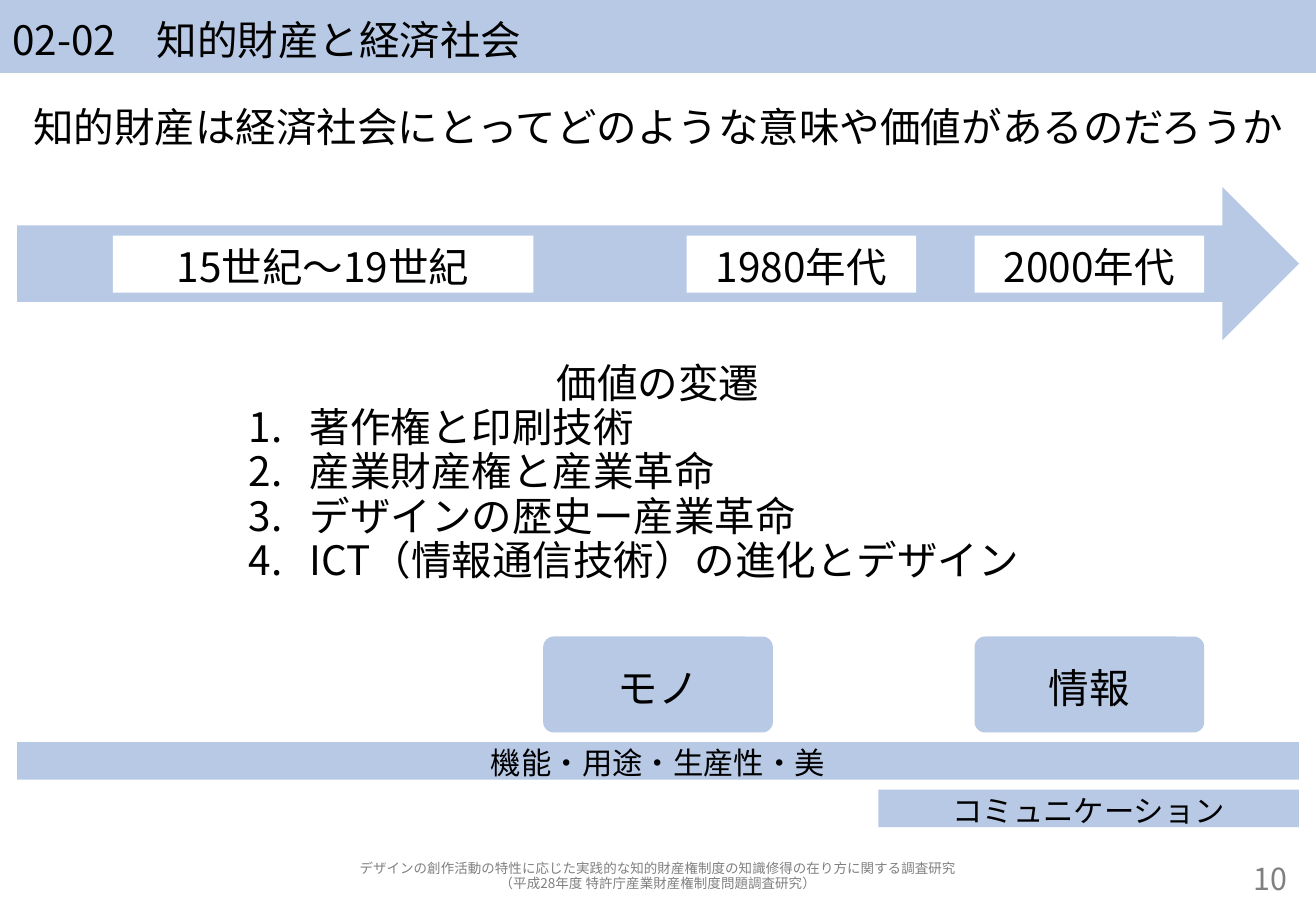
"""Build the slide on intellectual property and the economy."""
from pptx import Presentation
from pptx.dml.color import RGBColor
from pptx.enum.shapes import MSO_SHAPE as Shape
from pptx.enum.text import MSO_ANCHOR as Anchor, PP_ALIGN as Align
from pptx.oxml.xmlchemy import OxmlElement
from pptx.util import Inches, Pt

FONT = "Noto Sans CJK JP"
BLUE, WHITE, BLACK, GRAY = "B7C9E5", "FFFFFF", "000000", "808080"
SLIDE_WIDTH, SLIDE_HEIGHT = 10.83, 7.5
MARGIN = 0.14
CONTENT_WIDTH = SLIDE_WIDTH - 2 * MARGIN
TIGHT = 0.91

TITLE = "02-02\u3000知的財産と経済社会".replace("\u3000", "　")
QUESTION = "知的財産は経済社会にとってどのような意味や価値があるのだろうか"
PERIODS = [("15世紀～19世紀", 0.93, 3.46), ("1980年代", 5.65, 1.89), ("2000年代", 8.02, 1.89)]
HEADING = "価値の変遷"
CHANGES = ["著作権と印刷技術", "産業財産権と産業革命", "デザインの歴史ー産業革命",
           "ICT（情報通信技術）の進化とデザイン"]
SUBJECTS = [("モノ", 4.47), ("情報", 8.02)]
VALUES = [("機能・用途・生産性・美", 6.11, CONTENT_WIDTH), ("コミュニケーション", 6.5, 3.46)]
FOOTER = ["デザインの創作活動の特性に応じた実践的な知的財産権制度の知識修得の在り方に関する調査研究",
          "（平成28年度 特許庁産業財産権制度問題調査研究）"]
PAGE = "10"


def rgb(value):
    return RGBColor.from_string(value)


def write(shape, lines, size=24, color=BLACK, align=Align.CENTER, spacing=1.1, anchor=Anchor.MIDDLE):
    frame = shape.text_frame
    frame.word_wrap = True
    frame.vertical_anchor = anchor
    frame.margin_left = frame.margin_right = Inches(0.1)
    frame.margin_top = frame.margin_bottom = 0
    for index, line in enumerate(lines):
        paragraph = frame.add_paragraph() if index else frame.paragraphs[0]
        paragraph.alignment = align
        paragraph.line_spacing = spacing
        paragraph.space_before = paragraph.space_after = Pt(0)
        run = paragraph.add_run()
        run.text = line
        run.font.size = Pt(size)
        run.font.name = FONT
        run.font.color.rgb = rgb(color)
        east_asian = OxmlElement("a:ea")
        east_asian.set("typeface", FONT)
        run.font._element.find("{*}latin").addnext(east_asian)
    return frame


def add_box(slide, kind, left, top, width, height, fill):
    shape = slide.shapes.add_shape(kind, Inches(left), Inches(top), Inches(width), Inches(height))
    shape.shadow.inherit = False
    shape.fill.solid()
    shape.fill.fore_color.rgb = rgb(fill)
    shape.line.fill.background()
    return shape


def add_text(slide, left, top, width, height):
    return slide.shapes.add_textbox(Inches(left), Inches(top), Inches(width), Inches(height))


def number(paragraph):
    paragraph.alignment = Align.LEFT
    properties = paragraph._p.get_or_add_pPr()
    properties.set("marL", str(Inches(0.5)))
    properties.set("indent", str(-Inches(0.5)))
    bullet = OxmlElement("a:buAutoNum")
    bullet.set("type", "arabicPeriod")
    properties.append(bullet)


def main():
    presentation = Presentation()
    presentation.slide_width = Inches(SLIDE_WIDTH)
    presentation.slide_height = Inches(SLIDE_HEIGHT)
    slide = presentation.slides.add_slide(presentation.slide_layouts[5])

    title = slide.shapes.title
    title.left, title.top = 0, 0
    title.width, title.height = Inches(SLIDE_WIDTH), Inches(0.6)
    title.fill.solid()
    title.fill.fore_color.rgb = rgb(BLUE)
    write(title, [TITLE], align=Align.LEFT)

    question = add_text(slide, MARGIN, 0.76, CONTENT_WIDTH, 0.47)
    write(question, [QUESTION], anchor=Anchor.TOP).margin_top = Inches(0.04)

    add_box(slide, Shape.RIGHT_ARROW, MARGIN, 1.54, CONTENT_WIDTH, 1.26, BLUE)
    for label, left, width in PERIODS:
        write(add_box(slide, Shape.RECTANGLE, left, 1.94, width, 0.47, WHITE), [label])

    changes = add_text(slide, 1.95, 2.8, 6.93, 2.2)
    frame = write(changes, [HEADING] + CHANGES, spacing=TIGHT)
    for paragraph in frame.paragraphs[1:]:
        number(paragraph)

    for label, left in SUBJECTS:
        box = add_box(slide, Shape.ROUNDED_RECTANGLE, left, 5.24, 1.89, 0.79, BLUE)
        box.adjustments[0] = 0.11
        write(box, [label])
    for label, top, width in VALUES:
        left = SLIDE_WIDTH - MARGIN - width
        write(add_box(slide, Shape.RECTANGLE, left, top, width, 0.31, BLUE), [label], size=18)

    footer = add_text(slide, MARGIN, 7.06, CONTENT_WIDTH, 0.31)
    write(footer, FOOTER, size=8, color=GRAY, spacing=TIGHT)
    page = add_text(slide, 9.35, 7.06, 1.34, 0.31)
    write(page, [PAGE], size=18, color=GRAY, align=Align.RIGHT)

    presentation.save("out.pptx")


if __name__ == "__main__":
    main()
